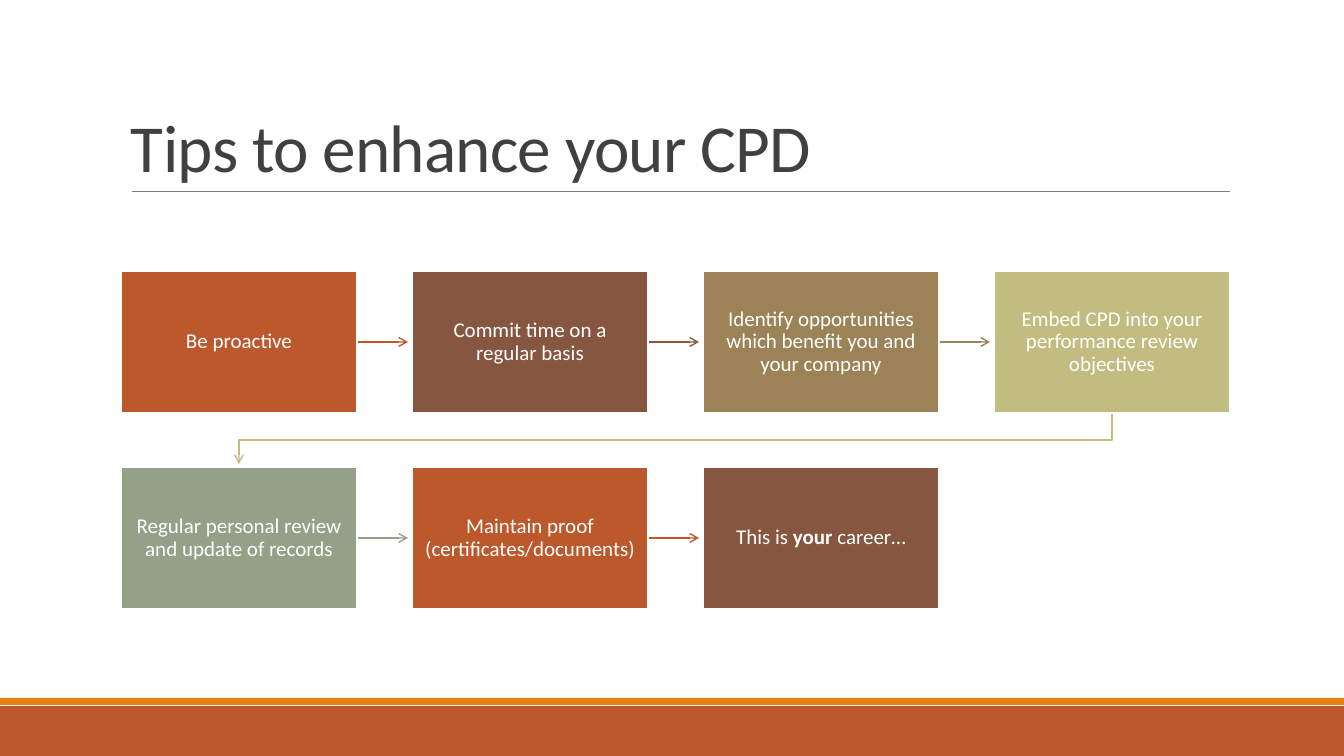
from dataclasses import dataclass

from pptx import Presentation
from pptx.dml.color import RGBColor
from pptx.enum.shapes import MSO_CONNECTOR, MSO_SHAPE
from pptx.enum.text import MSO_ANCHOR, PP_ALIGN
from pptx.oxml.ns import qn
from pptx.util import Pt
from lxml.etree import SubElement

PX = 914400 / 100.8


@dataclass
class Theme:
    font: str = "Calibri"
    white: str = "FFFFFF"
    ink: str = "404040"
    grey: str = "808080"
    rust: str = "BD582C"
    amber: str = "E48312"
    brown: str = "865640"
    tan: str = "9B8357"
    lime: str = "C2BC80"
    sage: str = "94A088"
    title: int = 48
    body: int = 15


theme = Theme()


def write(shape, text, size, color, anchor, align, leading, inset, spacing=0):
    """Fill a shape with one paragraph; words between asterisks are bold."""
    frame = shape.text_frame
    frame.word_wrap = True
    frame.vertical_anchor = anchor
    frame.margin_left = frame.margin_right = round(inset[0] * PX)
    frame.margin_top = frame.margin_bottom = round(inset[1] * PX)
    para = frame.paragraphs[0]
    para.alignment = align
    para.line_spacing = leading
    for i, part in enumerate(text.split("*")):
        run = para.add_run()
        run.text = part
        run.font.name = theme.font
        run.font.size = Pt(size)
        run.font.bold = i % 2 == 1
        run.font.color.rgb = RGBColor.from_string(color)
        if spacing:
            run._r.get_or_add_rPr().set("spc", str(spacing))


def stroke(shape, color, width, arrow=False):
    """Style a line without shadow, with an optional open arrowhead."""
    shape.line.color.rgb = RGBColor.from_string(color)
    shape.line.width = Pt(width)
    if arrow:
        SubElement(shape.line._get_or_add_ln(), qn("a:tailEnd"), type="arrow")
    SubElement(shape._element.spPr, qn("a:effectLst"))


deck = Presentation()
deck.slide_width = round(1344 * PX)
deck.slide_height = round(756 * PX)
shapes = deck.slides.add_slide(deck.slide_layouts[6]).shapes

# Footer bands
for top, high, color in [(706, 50, theme.rust), (698, 7, theme.amber)]:
    band = shapes.add_shape(MSO_SHAPE.RECTANGLE, 0, round(top * PX),
                            deck.slide_width, round(high * PX))
    band.shadow.inherit = False
    band.fill.solid()
    band.fill.fore_color.rgb = RGBColor.from_string(color)
    band.line.fill.background()

# Title and rule
rule = shapes.add_connector(MSO_CONNECTOR.STRAIGHT, round(132 * PX), round(191 * PX),
                            round(1230 * PX), round(191 * PX))
stroke(rule, theme.grey, 0.5)
title = shapes.add_textbox(round(121 * PX), round(31 * PX),
                           round(1109 * PX), round(160 * PX))
write(title, "Tips to enhance your CPD", theme.title, theme.ink,
      MSO_ANCHOR.BOTTOM, PP_ALIGN.LEFT, 0.85, (10, 5), spacing=-50)

# Steps, in rows of four
LEFT, TOP, WIDE, HIGH = 121, 271, 236, 142
STEP_X, STEP_Y, COLS = 291, 196, 4
steps = [
    ("Be proactive", theme.rust),
    ("Commit time on a regular basis", theme.brown),
    ("Identify opportunities which benefit you and your company", theme.tan),
    ("Embed CPD into your performance review objectives", theme.lime),
    ("Regular personal review and update of records", theme.sage),
    ("Maintain proof (certificates/documents)", theme.rust),
    ("This is *your* career…", theme.brown),
]
for i, (text, color) in enumerate(steps):
    row, col = divmod(i, COLS)
    x, y = LEFT + col * STEP_X, TOP + row * STEP_Y
    if col == COLS - 1:
        start, end = x + WIDE // 2, LEFT + WIDE // 2
        turn = y + HIGH + 27
        path = shapes.build_freeform(start, y + HIGH, scale=PX)
        path.add_line_segments([(start, turn), (end, turn), (end, y + STEP_Y - 3)],
                               close=False)
        arrow = path.convert_to_shape()
        arrow.fill.background()
        stroke(arrow, color, 1, arrow=True)
    elif i < len(steps) - 1:
        mid = round((y + HIGH / 2) * PX)
        arrow = shapes.add_connector(MSO_CONNECTOR.STRAIGHT, round((x + WIDE) * PX), mid,
                                     round((x + STEP_X - 4) * PX), mid)
        stroke(arrow, color, 1, arrow=True)
    box = shapes.add_shape(MSO_SHAPE.RECTANGLE, round(x * PX), round(y * PX),
                           round(WIDE * PX), round(HIGH * PX))
    box.fill.solid()
    box.fill.fore_color.rgb = RGBColor.from_string(color)
    stroke(box, theme.white, 1.25)
    write(box, text, theme.body, theme.white, MSO_ANCHOR.MIDDLE,
          PP_ALIGN.CENTER, 0.9, (11, 12))

deck.save("out.pptx")
